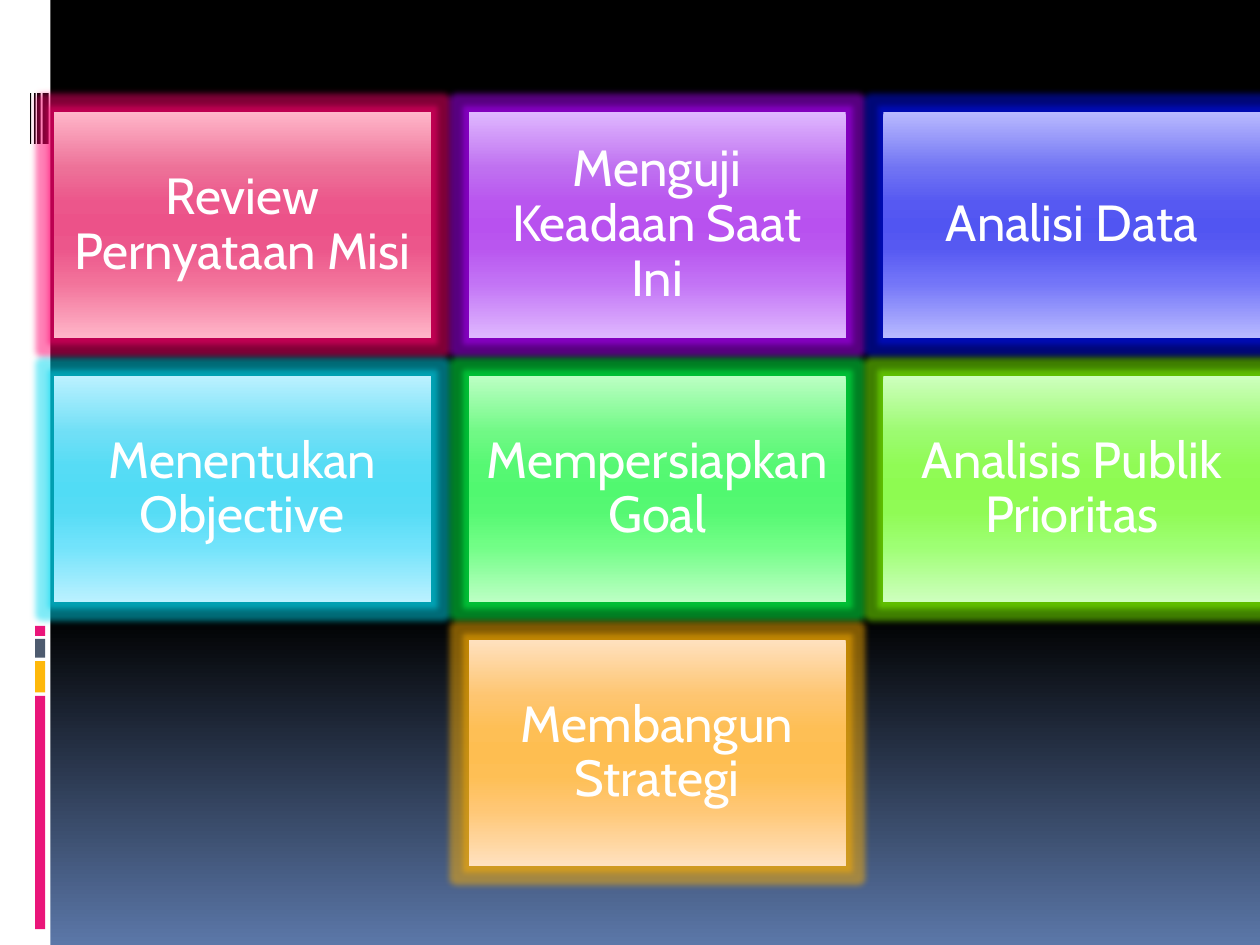
from lxml.etree import SubElement
from pptx import Presentation
from pptx.dml.color import RGBColor
from pptx.enum.shapes import MSO_SHAPE
from pptx.enum.text import MSO_ANCHOR, PP_ALIGN
from pptx.oxml.ns import qn
from pptx.util import Cm, Pt

STOP_POSITIONS = (0, 25, 40, 50, 60, 75, 100)
BACKGROUND_STOPS = ((0, "000000"), (65, "000000"), (100, "5B77A8"))
STEP_ROWS = [
    [
        ("Review Pernyataan Misi", "FF006E", "FFB6C9 ED7198 EC568B EC5289 EC568B F2729A FFB6C9"),
        ("Menguji Keadaan Saat Ini", "B000FF", "DFB8FF BF70F0 B956EF B851EF B956EF C272F5 DFB8FF"),
        ("Analisi Data", "0010F0", "B9BAFF 7073F3 5659F2 5155F2 5659F2 7274F8 B9BAFF"),
    ],
    [
        ("Menentukan Objective", "00D8F0", "BBF1FF 70DFF6 56DCF5 51DCF5 56DCF5 71E3FB BBF1FF"),
        ("Mempersiapkan Goal", "00FF48", "BCFFC4 70F985 56F873 51F870 56F873 71FE86 BCFFC4"),
        ("Analisis Publik Prioritas", "80FF00", "CEFFBE 9CFB70 90FB55 8EFB51 90FB55 9EFF73 CEFFBE"),
    ],
    [
        ("Membangun Strategi", "FFB000", "FFE1BF FEC570 FEBF55 FEBE51 FEBF55 FFC775 FFE1BF"),
    ],
]
SIDE_BAR = (0, 0, 1.02, 19.05, "FFFFFF")
COLOUR_BLOCKS = [
    (12.62, 0.2, "EA157A"),
    (12.88, 0.38, "4E5B6F"),
    (13.33, 0.63, "FEB80A"),
    (14.03, 4.7, "EA157A"),
]
BARCODE_STRIPES = [(0.61, 0.02), (0.69, 0.03), (0.75, 0.07), (0.86, 0.12)]
GRID_LEFT, GRID_TOP = 1.09, 2.26
BOX_WIDTH, BOX_HEIGHT, GAP = 7.6, 4.56, 0.76
COLUMNS = 3


def colour(hex_text):
    return RGBColor.from_string(hex_text)


def set_gradient(fill, element, stops):
    fill.gradient()
    fill.gradient_angle = 270
    stop_list = element.find(".//" + qn("a:gsLst"))
    for old_stop in list(stop_list):
        stop_list.remove(old_stop)
    for position, value in stops:
        stop = SubElement(stop_list, qn("a:gs"), pos=str(position * 1000))
        SubElement(stop, qn("a:srgbClr"), val=value)


def add_rectangle(slide, left, top, width, height):
    shape = slide.shapes.add_shape(
        MSO_SHAPE.RECTANGLE, Cm(left), Cm(top), Cm(width), Cm(height))
    shape.shadow.inherit = False
    shape.line.fill.background()
    return shape


def add_solid(slide, left, top, width, height, fill):
    shape = add_rectangle(slide, left, top, width, height)
    shape.fill.solid()
    shape.fill.fore_color.rgb = colour(fill)


def add_glow(shape, value):
    effects = shape.element.spPr.find(qn("a:effectLst"))
    glow = SubElement(effects, qn("a:glow"), rad=str(Cm(0.25)))
    glow_colour = SubElement(glow, qn("a:srgbClr"), val=value)
    SubElement(glow_colour, qn("a:alpha"), val="50000")


def add_step(slide, left, top, text, glow, gradient):
    shape = add_rectangle(slide, left, top, BOX_WIDTH, BOX_HEIGHT)
    set_gradient(shape.fill, shape.element, zip(STOP_POSITIONS, gradient.split()))
    add_glow(shape, glow)
    frame = shape.text_frame
    frame.word_wrap = True
    frame.vertical_anchor = MSO_ANCHOR.MIDDLE
    frame.margin_left = frame.margin_right = Cm(0.3)
    frame.margin_top = frame.margin_bottom = Cm(0.3)
    paragraph = frame.paragraphs[0]
    paragraph.alignment = PP_ALIGN.CENTER
    paragraph.line_spacing = 0.9
    run = paragraph.add_run()
    run.text = text
    run.font.name = "Cabin"
    run.font.size = Pt(29)
    run.font.color.rgb = colour("FFFFFF")


def main():
    presentation = Presentation()
    presentation.slide_width, presentation.slide_height = Cm(25.4), Cm(19.05)
    slide = presentation.slides.add_slide(presentation.slide_layouts[6])
    set_gradient(slide.background.fill, slide.element, BACKGROUND_STOPS)

    add_solid(slide, *SIDE_BAR)
    for top, height, fill in COLOUR_BLOCKS:
        add_solid(slide, 0.71, top, 0.2, height, fill)
    for left, width in BARCODE_STRIPES:
        add_solid(slide, left, 1.88, width, 1.02, "000000")

    for row, steps in enumerate(STEP_ROWS):
        first_column = (COLUMNS - len(steps)) / 2
        top = GRID_TOP + row * (BOX_HEIGHT + GAP)
        for column, step in enumerate(steps, start=0):
            left = GRID_LEFT + (first_column + column) * (BOX_WIDTH + GAP)
            add_step(slide, left, top, *step)

    presentation.save("out.pptx")


if __name__ == "__main__":
    main()
